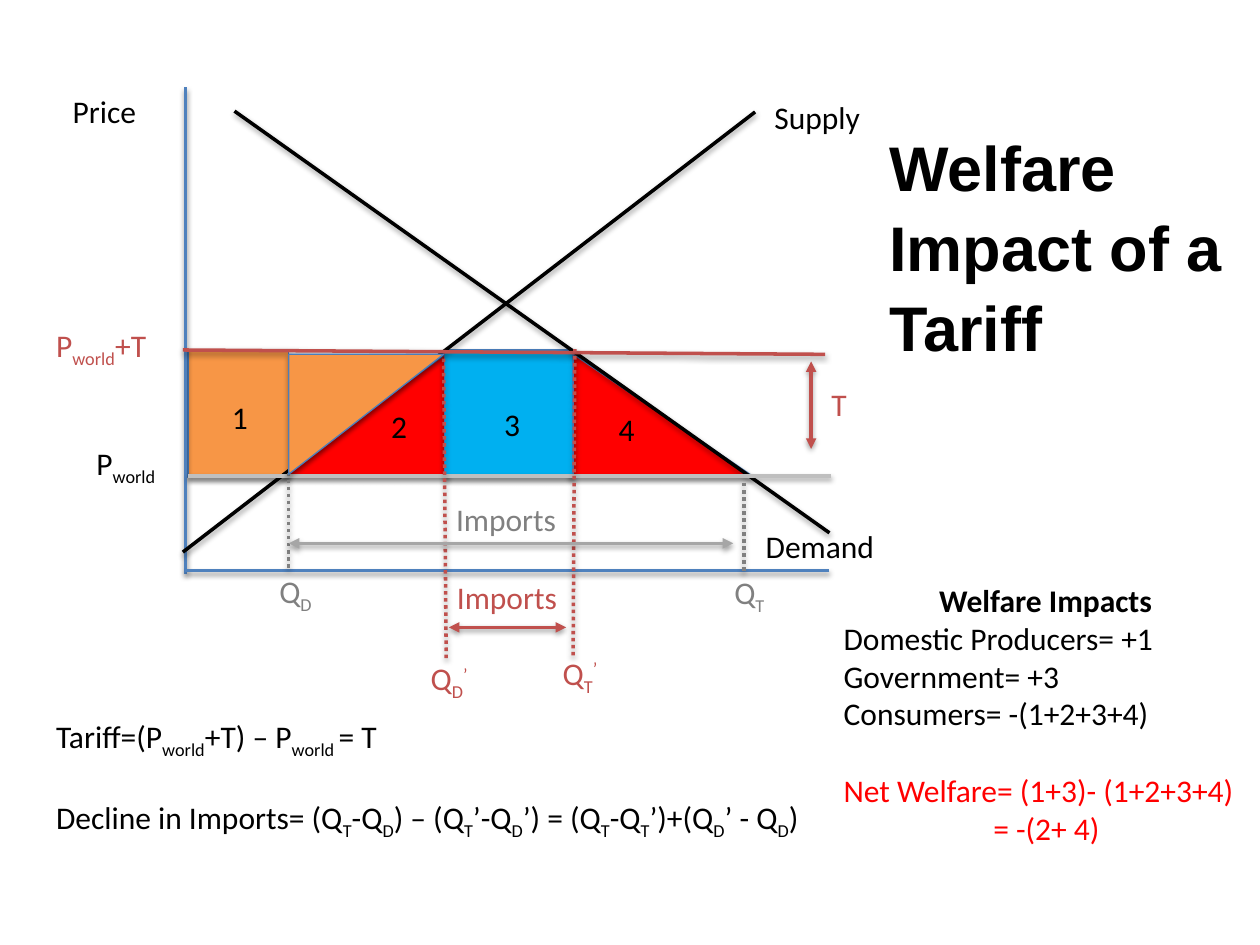
from lxml import etree
from pptx import Presentation
from pptx.dml.color import RGBColor
from pptx.enum.dml import MSO_LINE
from pptx.enum.shapes import MSO_CONNECTOR, MSO_SHAPE
from pptx.enum.text import MSO_ANCHOR, MSO_AUTO_SIZE, PP_ALIGN
from pptx.oxml.ns import qn
from pptx.util import Pt

BLACK = RGBColor(0x00, 0x00, 0x00)
RED = RGBColor(0xFF, 0x00, 0x00)
CYAN = RGBColor(0x00, 0xB0, 0xF0)
ORANGE = RGBColor(0xF7, 0x96, 0x46)
OUTLINE = RGBColor(0x4B, 0x7E, 0xBC)
AXIS_BLUE = RGBColor(0x4F, 0x81, 0xBD)
BRICK = RGBColor(0xC0, 0x50, 0x4D)
GRAY = RGBColor(0x80, 0x80, 0x80)
ARROW_GRAY = RGBColor(0xA6, 0xA6, 0xA6)
LIGHT_GRAY = RGBColor(0xBF, 0xBF, 0xBF)
LABEL_HEIGHT = 29
LINE_HEIGHT = 22
BASELINES = {"_": "-25000", "^": "30000"}


def add_shadow(shape, distance, opacity):
    effects = etree.SubElement(shape._element.spPr, qn("a:effectLst"))
    shadow = etree.SubElement(effects, qn("a:outerShdw"), blurRad=str(Pt(3.1)),
                              dist=str(Pt(distance)), dir="5400000", rotWithShape="0")
    color = etree.SubElement(shadow, qn("a:srgbClr"), val="000000")
    etree.SubElement(color, qn("a:alpha"), val=str(opacity * 1000))


def add_area(slide, kind, box, color, flip=None):
    area = slide.shapes.add_shape(kind, *map(Pt, box))
    area.fill.solid()
    area.fill.fore_color.rgb = color
    area.line.color.rgb = OUTLINE
    area.line.width = Pt(0.75)
    if flip:
        area._element.spPr.xfrm.set(flip, "1")
    add_shadow(area, 1.8, 35)


def add_line(slide, ends, color, dotted=False, arrows=False):
    line = slide.shapes.add_connector(MSO_CONNECTOR.STRAIGHT, *map(Pt, ends))
    line.line.color.rgb = color
    line.line.width = Pt(2)
    if dotted:
        line.line.dash_style = MSO_LINE.ROUND_DOT
    if arrows:
        for end in ("a:headEnd", "a:tailEnd"):
            etree.SubElement(line.line._get_or_add_ln(), qn(end), type="triangle")
    add_shadow(line, 1.6, 38)


def write_segments(paragraph, marked_text, color):
    for segment in marked_text.split("|"):
        run = paragraph.add_run()
        baseline = BASELINES.get(segment[0])
        run.text = segment[1:] if baseline else segment
        run.font.size = Pt(18)
        run.font.name = "Calibri"
        run.font.color.rgb = color
        if baseline:
            run.font._element.set("baseline", baseline)


def add_text(slide, box, lines, color=BLACK):
    frame = slide.shapes.add_textbox(*map(Pt, box)).text_frame
    frame.word_wrap = True
    for index, line in enumerate(lines):
        paragraph = frame.add_paragraph() if index else frame.paragraphs[0]
        write_segments(paragraph, line, color)
    return frame.paragraphs


def build_diagram(slide, box):
    left, top, width, height = box

    def lines(specs, **style):
        for (x1, y1, x2, y2), color in specs:
            add_line(slide, (left + x1, top + y1, left + x2, top + y2), color, **style)

    def area(kind, place, color, flip=None):
        x, y, w, h = place
        add_area(slide, kind, (left + x, top + y, w, h), color, flip)

    area(MSO_SHAPE.RIGHT_TRIANGLE, (219.5, 151, 104.5, 71), RED)
    area(MSO_SHAPE.RIGHT_TRIANGLE, (54, 151, 96.5, 71), RED, "flipH")
    area(MSO_SHAPE.RECTANGLE, (148, 150, 73.5, 73), CYAN)
    area(MSO_SHAPE.RECTANGLE, (1.5, 151, 57.5, 72), ORANGE)

    lines([
        ((0, 0, 0, height + 2), AXIS_BLUE),
        ((width, height, 0, height), AXIS_BLUE),
        ((28, 13.5, width, 254.5), BLACK),
        ((-1.5, 265.5, 325.5, 14), BLACK),
        ((1.5, 222, 369, 222), LIGHT_GRAY),
        ((-1.5, 150, 365.5, 152.5), BRICK),
    ])
    lines([
        ((59, 220, 59, height), GRAY),
        ((147.5, 155, 149, 326.5), BRICK),
        ((222.5, 149.5, 221.5, 326.5), BRICK),
        ((319, 226, 319, 277.5), GRAY),
    ], dotted=True)
    lines([
        ((59, 260.5, 313, 260.5), ARROW_GRAY),
        ((150.5, 308.5, 217.5, 308.5), BRICK),
        ((357.5, 156.5, 357.5, 206.5), BRICK),
    ], arrows=True)

    labels = [
        ("Supply", 329.5, 2.5, 69, BLACK),
        ("Demand", 324.5, 247.5, 77, BLACK),
        ("P|_world", -58, 200, 57, BLACK),
        ("P|_world|+T", -81, 133, 80, BRICK),
        ("Q|_D", 46.5, 273.5, 35, GRAY),
        ("Q|_T", 306.5, 274, 37, GRAY),
        ("Imports", 147.5, 232, 98, GRAY),
        ("Q|_D|^’", 133, 323, 45, BRICK),
        ("Q|_T|^’", 208.5, 320, 45, BRICK),
        ("Imports", 148, 277, 98, BRICK),
        ("Price", -71.5, -1, 69, BLACK),
        ("T", 362, 166.5, 80, BRICK),
        ("1", 19.5, 174, 28, BLACK),
        ("2", 110.5, 179, 28, BLACK),
        ("3", 175, 178, 28, BLACK),
        ("4", 240.5, 180.5, 28, BLACK),
    ]
    for label, x, y, label_width, color in labels:
        add_text(slide, (left + x, top + y, label_width, LABEL_HEIGHT), [label], color)

    area(MSO_SHAPE.RIGHT_TRIANGLE, (59, 152.5, 88.5, 68.5), ORANGE, "flipV")


def build_formulas(slide, box):
    tariff, decline = add_text(slide, box, [
        "Tariff=(P|_world|+T) – P|_world |= T",
        "Decline in Imports= (Q|_T|-Q|_D|) – (Q|_T|’-Q|_D|’) = "
        "(Q|_T|-Q|_T|’)+(Q|_D|’ - Q|_D|)",
    ])
    decline.space_before = Pt(LINE_HEIGHT)


def build_impacts(slide, box):
    paragraphs = add_text(slide, box, [
        "Welfare Impacts",
        "Domestic Producers= +1",
        "Government= +3",
        "Consumers= -(1+2+3+4)",
        "Net Welfare= (1+3)- (1+2+3+4)",
        "= -(2+ 4)",
    ])
    heading, net, result = paragraphs[0], paragraphs[-2], paragraphs[-1]
    heading.alignment = PP_ALIGN.CENTER
    heading.runs[0].font.bold = True
    net.space_before = Pt(LINE_HEIGHT)
    result._p.get_or_add_pPr().set("marL", str(Pt(85.5)))
    for paragraph in (net, result):
        paragraph.runs[0].font.color.rgb = RED


def build_title(slide, box):
    title = slide.shapes.title
    title.left, title.top, title.width, title.height = map(Pt, box)
    frame = title.text_frame
    frame.text = "Welfare Impact of a Tariff"
    frame.word_wrap = True
    frame.auto_size = MSO_AUTO_SIZE.NONE
    frame.vertical_anchor = MSO_ANCHOR.TOP
    paragraph = frame.paragraphs[0]
    paragraph.alignment = PP_ALIGN.LEFT
    paragraph.line_spacing = 1.06
    font = paragraph.runs[0].font
    font.size = Pt(36)
    font.name = "Arial"
    font.bold = True
    font.color.rgb = BLACK


def main():
    deck = Presentation()
    deck.slide_width, deck.slide_height = Pt(720), Pt(540)
    slide = deck.slides.add_slide(deck.slide_layouts[5])
    build_diagram(slide, (106, 50, 368, 276))
    build_formulas(slide, (25, 406, 471, 73))
    build_impacts(slide, (475, 328.5, 245, 160))
    build_title(slide, (501, 67, 209.5, 138))
    deck.save("out.pptx")


if __name__ == "__main__":
    main()
